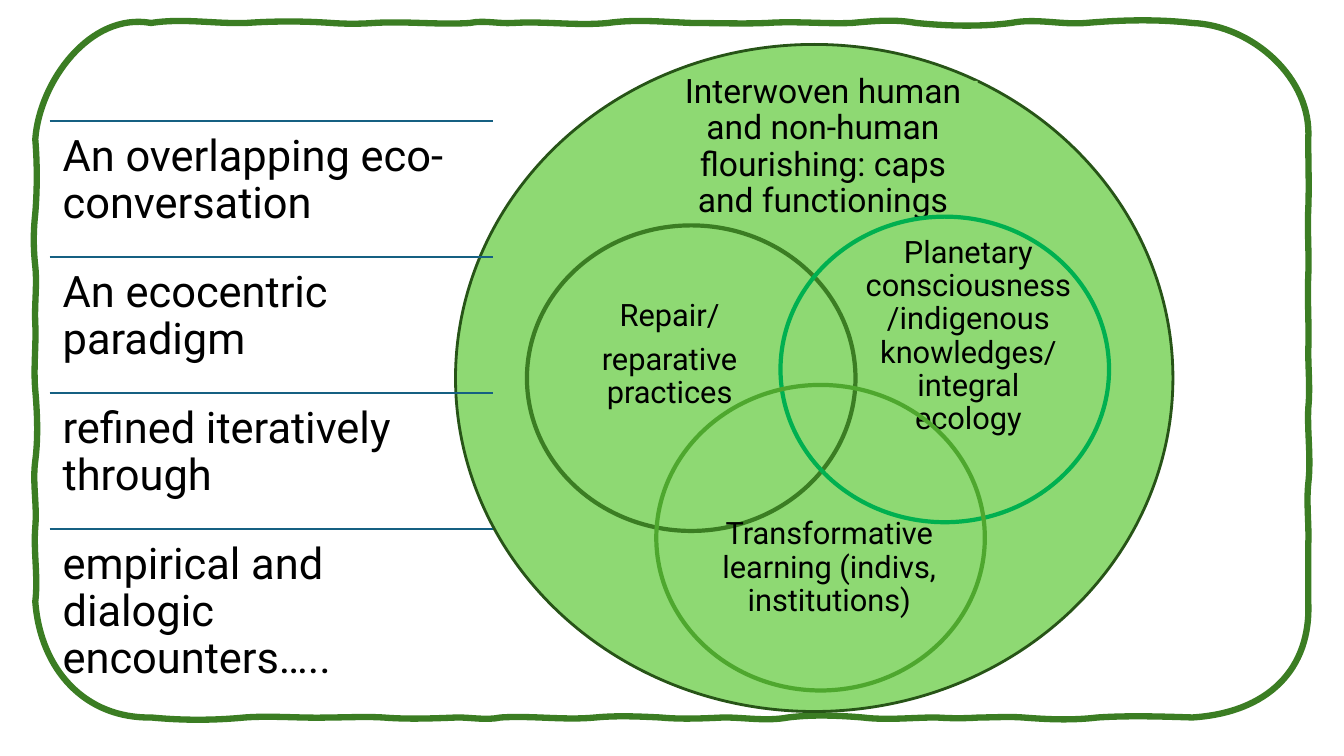
import pptx
import pptx.util
import pptx.dml.color
import pptx.enum.shapes
import pptx.enum.text
import pptx.oxml
import pptx.oxml.ns
import lxml.etree
from pptx.util import Cm

FONT = "Roboto"
LEFT, RIGHT, TOP, BOTTOM = 0.89, 32.97, 0.58, 18.08

# Wavy sides: (end of the wave in cm, two bulges in hundredths of an inch)
TOP_WAVES = [(6.2, -5, 1), (8.36, -2, -2), (9.42, 1, 1), (11.84, -2, 2),
             (12.93, -3, 1), (15.32, -2, 3), (17.45, -4, -1), (19.33, 0, 1),
             (21.46, -2, 1), (23.09, -2, -4), (25.48, 3, 4), (27.36, -5, 2),
             (30.05, -3, -4)]
RIGHT_WAVES = [(5.28, 0, 1), (6.96, -1, 1), (8.84, -1, 1), (10.29, 0, 2),
               (12.19, -1, 3), (13.74, -2, 1), (15.16, 0, 0)]
BOTTOM_WAVES = [(27.66, -1, -2), (25.78, 3, 2), (24.69, -1, 0), (23.6, 1, 1),
                (21.74, 0, 3), (19.86, -2, -3), (18.24, 4, 0), (16.64, 1, 2),
                (15.01, -1, -2), (12.62, 3, -2), (11.53, 3, 0), (9.65, 1, 2),
                (8.31, -1, 0), (6.17, 1, -2), (3.81, 3, 3)]
LEFT_WAVES = [(13.28, 3, -2), (11.61, 2, -3), (9.83, 3, 2), (8.15, -2, 1),
              (6.71, -1, 2), (5.38, -2, -2), (3.51, 2, 2)]


def colour(hex_string):
    return pptx.dml.color.RGBColor.from_string(hex_string)


def wavy_side(start, level, waves, vertical=False):
    """Curves along one side, each as two control points and an end."""
    curves = []
    for end, bulge_one, bulge_two in waves:
        points = [(start + (end - start) / 3, level + bulge_one * 0.0254),
                  (start + (end - start) * 2 / 3, level + bulge_two * 0.0254),
                  (end, level)]
        if vertical:
            points = [(across, along) for along, across in points]
        curves.append(points)
        start = end
    return curves


def add_wavy_frame(page):
    curves = [[(0.99, 2.08), (2.26, 0.3), (3.81, TOP)]]
    curves += wavy_side(3.81, TOP, TOP_WAVES)
    curves += [[(31.55, 0.64), (33.07, 1.96), (RIGHT, 3.51)]]
    curves += wavy_side(3.51, RIGHT, RIGHT_WAVES, vertical=True)
    curves += [[(33.05, 16.87), (31.95, 17.96), (30.05, BOTTOM)]]
    curves += wavy_side(30.05, BOTTOM, BOTTOM_WAVES)
    curves += [[(2.16, 18.11), (1.02, 16.89), (LEFT, 15.16)]]
    curves += wavy_side(15.16, LEFT, LEFT_WAVES, vertical=True)

    builder = page.shapes.build_freeform(Cm(LEFT), Cm(3.51))
    builder.add_line_segments([(Cm(x), Cm(y)) for x, y in (c[-1] for c in curves)],
                              close=True)
    frame = builder.convert_to_shape()
    style_outline(frame, "3B7D23", 4.5)
    bend_segments(frame, curves)


def bend_segments(frame, curves):
    """Turn each straight segment of the outline into a cubic curve."""
    name = pptx.oxml.ns.qn
    segments = list(frame._element.spPr.iter(name("a:lnTo")))
    for segment, points in zip(segments, curves):
        bend = lxml.etree.Element(name("a:cubicBezTo"))
        for x, y in points:
            lxml.etree.SubElement(bend, name("a:pt"), x=str(Cm(x) - frame.left),
                                  y=str(Cm(y) - frame.top))
        segment.getparent().replace(segment, bend)


def style_outline(shape, line, width, fill=None):
    shape.shadow.inherit = False
    if fill:
        shape.fill.solid()
        shape.fill.fore_color.rgb = colour(fill)
    else:
        shape.fill.background()
    shape.line.color.rgb = colour(line)
    shape.line.width = pptx.util.Pt(width)


def add_circle(group, left, top, width, height, line, line_width, fill=None):
    circle = group.shapes.add_shape(pptx.enum.shapes.MSO_SHAPE.OVAL,
                                    Cm(left), Cm(top), Cm(width), Cm(height))
    style_outline(circle, line, line_width, fill)


def add_text(group, left, top, width, height, text, size, inset=0.2,
             centred=True, fill=None):
    place = Cm(left), Cm(top), Cm(width), Cm(height)
    if fill:
        box = group.shapes.add_shape(pptx.enum.shapes.MSO_SHAPE.RECTANGLE, *place)
        box.shadow.inherit = False
        box.fill.solid()
        box.fill.fore_color.rgb = colour(fill)
        box.line.fill.background()
    else:
        box = group.shapes.add_textbox(*place)
    frame = box.text_frame
    frame.word_wrap = True
    frame.margin_left = frame.margin_right = Cm(inset)
    frame.margin_top = frame.margin_bottom = Cm(inset)
    anchors = pptx.enum.text.MSO_ANCHOR
    frame.vertical_anchor = anchors.MIDDLE if centred else anchors.TOP
    frame.text = text
    alignments = pptx.enum.text.PP_ALIGN
    for para in frame.paragraphs:
        para.alignment = alignments.CENTER if centred else alignments.LEFT
        para.line_spacing = 0.9
        para.space_after = pptx.util.Pt(size * 0.35)
        for span in para.runs:
            span.font.name = FONT
            span.font.size = pptx.util.Pt(size)
            span.font.color.rgb = colour("000000")


def add_rule(group, left, top, width):
    rule = group.shapes.add_connector(pptx.enum.shapes.MSO_CONNECTOR.STRAIGHT,
                                      Cm(left), Cm(top), Cm(left + width), Cm(top))
    rule.line.color.rgb = colour("156082")
    rule.line.width = pptx.util.Pt(1.5)
    lxml.etree.SubElement(rule._element.spPr, pptx.oxml.ns.qn("a:effectLst"))


def main():
    deck = pptx.Presentation()
    deck.slide_width, deck.slide_height = Cm(33.87), Cm(19.05)
    page = deck.slides.add_slide(deck.slide_layouts[6])

    add_wavy_frame(page)

    # Surrounding circle and its heading
    diagram = page.shapes.add_group_shape()
    add_circle(diagram, 11.48, 1.12, 18.08, 16.81, "275417", 2, "8ED973")
    add_text(diagram, 16.84, 2.04, 7.8, 3.33,
             "Interwoven human and non-human flourishing: caps and functionings",
             24, fill="8ED973")

    # Three overlapping circles with their labels
    topics = [
        (13.28, 5.68, "3B7D23", (14.21, 7.29, 5.33, 3.33),
         "Repair/\nreparative practices"),
        (19.67, 5.46, "00B050", (21.56, 7.25, 5.69, 2.46),
         "Planetary consciousness/indigenous knowledges/ integral ecology"),
        (16.54, 9.7, "4EA72E", (17.93, 13.45, 5.94, 1.73),
         "Transformative learning (indivs, institutions)"),
    ]
    for left, top, line, label_place, label in topics:
        add_circle(diagram, left, top, 8.28, 7.7, line, 3)
        add_text(diagram, *label_place, label, 22)

    # Ruled list on the left
    conversation = page.shapes.add_group_shape()
    statements = ["An overlapping eco-conversation", "An ecocentric paradigm",
                  "refined iteratively through",
                  "empirical and dialogic encounters….."]
    for index, statement in enumerate(statements):
        top = 3.05 + index * 3.43
        add_rule(conversation, 1.25, top, 11.18)
        add_text(conversation, 1.25, top, 11.18, 3.43, statement, 31, inset=0.33,
                 centred=False)

    deck.save("out.pptx")


if __name__ == "__main__":
    main()
